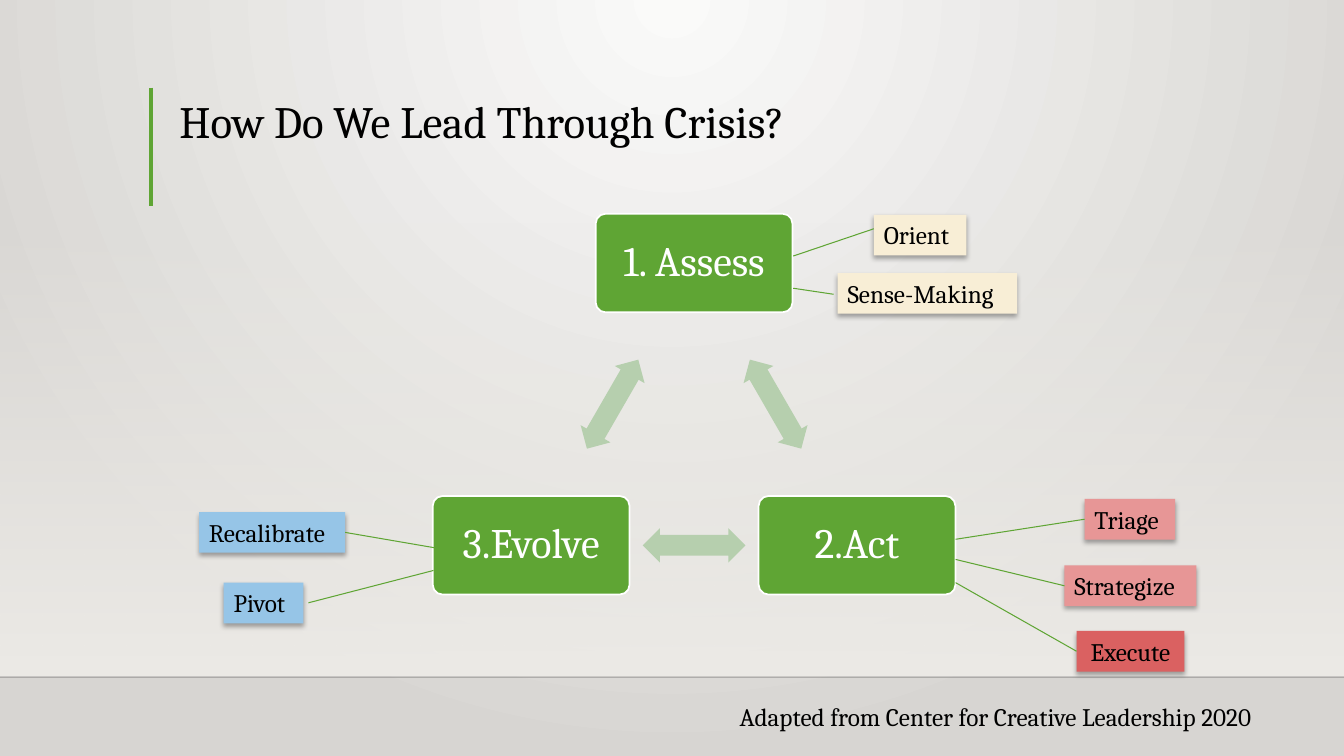
import math
from dataclasses import dataclass

from lxml import etree
from pptx import Presentation
from pptx.dml.color import RGBColor
from pptx.enum import shapes, text
from pptx.oxml import ns
from pptx.util import Pt

SHAPE = shapes.MSO_SHAPE
ALIGN = text.PP_ALIGN
ANCHOR = text.MSO_ANCHOR
WIDTH, HEIGHT = 960, 540
LEFT_SIDE, RIGHT_SIDE = 1, 3


@dataclass(frozen=True)
class Theme:
    font: str = "Cambria"
    title_size: int = 32
    step_size: int = 30
    label_size: int = 18
    ink: str = "000000"
    white: str = "FFFFFF"
    green: str = "5FA534"
    arrow: str = "B6CFAE"
    horizon: str = "000001"
    haze: str = "EDEBE7"
    glow: str = "FAFAF9"
    edge: str = "D7D5D2"
    cream: str = "F8EED6"
    pink: str = "E79696"
    red: str = "DA6161"
    blue: str = "96C5E7"


def add_element(parent, tag, **attributes):
    values = {name: str(value) for name, value in attributes.items()}
    return etree.SubElement(parent, ns.qn(tag), values)


def set_alpha(color_element, percent):
    add_element(color_element, "a:alpha", val=percent * 1000)


class CrisisSlide:
    def __init__(self, presentation, theme):
        self.theme = theme
        self.slide = presentation.slides.add_slide(presentation.slide_layouts[5])

    def color(self, fill, value):
        fill.solid()
        fill.fore_color.rgb = RGBColor.from_string(value)

    def gradient(self, fill, start, end):
        fill.gradient()
        for stop, value, position in zip(fill.gradient_stops, (start, end), (0, 1)):
            stop.color.rgb = RGBColor.from_string(value)
            stop.position = position

    def background(self):
        """Radial glow centred on the top edge."""
        self.gradient(self.slide.background.fill, self.theme.glow, self.theme.edge)
        gradient = self.slide.element.find(".//" + ns.qn("a:gradFill"))
        gradient.remove(gradient.find(ns.qn("a:lin")))
        radial = add_element(gradient, "a:path", path="circle")
        add_element(radial, "a:fillToRect", l=43000, t=0, r=43000, b=100000)

    def haze(self, top, height):
        """Full-width band that fades in downwards."""
        band = self.shape(SHAPE.RECTANGLE, 0, top, WIDTH, height, self.theme.haze)
        self.gradient(band.fill, self.theme.haze, self.theme.haze)
        band.fill.gradient_angle = 270
        set_alpha(band._element.find(".//" + ns.qn("a:srgbClr")), 0)

    def add_text(self, shape, words, size, color, align=ALIGN.LEFT, anchor=ANCHOR.TOP):
        frame = shape.text_frame
        frame.word_wrap = True
        frame.auto_size = text.MSO_AUTO_SIZE.NONE
        frame.vertical_anchor = anchor
        paragraph = frame.paragraphs[0]
        paragraph.alignment = align
        run = paragraph.add_run()
        run.text = words
        run.font.name = self.theme.font
        run.font.size = Pt(size)
        run.font.color.rgb = RGBColor.from_string(color)
        return paragraph

    def title(self, words, left, top, width, height):
        title = self.slide.shapes.title
        title.left, title.top = Pt(left), Pt(top)
        title.width, title.height = Pt(width), Pt(height)
        paragraph = self.add_text(title, words, self.theme.title_size, self.theme.ink,
                                  anchor=ANCHOR.BOTTOM)
        paragraph.line_spacing = 0.9

    def shape(self, kind, left, top, width, height, fill):
        shape = self.slide.shapes.add_shape(kind, Pt(left), Pt(top), Pt(width), Pt(height))
        shape.shadow.inherit = False
        self.color(shape.fill, fill)
        shape.line.fill.background()
        return shape

    def step(self, words, center, width, height):
        x, y = center
        box = self.shape(SHAPE.ROUNDED_RECTANGLE, x - width / 2, y - height / 2,
                         width, height, self.theme.green)
        box.adjustments[0] = 0.1
        self.color(box.line.fill, self.theme.white)
        box.line.width = Pt(1.25)
        paragraph = self.add_text(box, words, self.theme.step_size, self.theme.white,
                                  ALIGN.CENTER, ANCHOR.MIDDLE)
        paragraph.line_spacing = 0.9

    def arrow(self, start, end, length, thickness):
        """Double arrow halfway between two step centres."""
        x, y = (start[0] + end[0]) / 2, (start[1] + end[1]) / 2
        arrow = self.shape(SHAPE.LEFT_RIGHT_ARROW, x - length / 2, y - thickness / 2,
                           length, thickness, self.theme.arrow)
        arrow.adjustments[0], arrow.adjustments[1] = 0.6, 0.5
        angle = math.atan2(end[1] - start[1], end[0] - start[0])
        arrow.rotation = round(math.degrees(angle)) % 360

    def label(self, words, left, top, width, fill, align=ALIGN.LEFT):
        box = self.shape(SHAPE.RECTANGLE, left, top, width, 29, fill)
        self.add_text(box, words, self.theme.label_size, self.theme.ink, align)
        effects = box._element.spPr.find(ns.qn("a:effectLst"))
        shadow = add_element(effects, "a:outerShdw", blurRad=Pt(3.5), dist=Pt(2.2),
                             dir=5400000, algn="t", rotWithShape=0)
        set_alpha(add_element(shadow, "a:srgbClr", val=self.theme.ink), 32)
        return box

    def caption(self, words, left, top, width, height):
        box = self.slide.shapes.add_textbox(Pt(left), Pt(top), Pt(width), Pt(height))
        self.add_text(box, words, self.theme.label_size, self.theme.ink)

    def line(self, start, end, color, weight, alpha=None):
        line = self.slide.shapes.add_connector(
            shapes.MSO_CONNECTOR.STRAIGHT, *(Pt(value) for value in (*start, *end)))
        self.color(line.line.fill, color)
        line.line.width = Pt(weight)
        properties = line._element.spPr
        add_element(properties, "a:effectLst")
        if alpha is not None:
            set_alpha(properties.find(".//" + ns.qn("a:srgbClr")), alpha)
        return line


def main():
    presentation = Presentation()
    presentation.slide_width, presentation.slide_height = Pt(WIDTH), Pt(HEIGHT)
    theme = Theme()
    page = CrisisSlide(presentation, theme)
    page.background()
    page.haze(158.4, 324)
    page.line((0, 483.8), (WIDTH, 483.8), theme.horizon, 1, alpha=20)
    page.line((108, 62.6), (108, 146.9), theme.green, 3)
    page.title("How Do We Lead Through Crisis?", 121, 63.4, 749.5, 46)

    # The three steps sit on a circle, clockwise from the top.
    steps = ["1. Assess", "2.Act", "3.Evolve"]
    radius = 134.4
    centers = []
    for index in range(len(steps)):
        angle = math.radians(-90 + index * 360 / len(steps))
        centers.append((495.8 + radius * math.cos(angle), 322.3 + radius * math.sin(angle)))
    for index, (words, center) in enumerate(zip(steps, centers)):
        page.step(words, center, 140.6, 70.4)
        page.arrow(center, centers[(index + 1) % len(steps)], 73.4, 24.6)

    # Words, left, top, width, fill, line start at the step, line end at the label.
    # A line end given as a side number is joined to the middle of that side.
    labels = [
        ("Orient", 624.2, 153.4, 66.2, theme.cream, (566.6, 182.9), (624.2, 163.4)),
        ("Sense-Making", 598.3, 195.1, 128.2, theme.cream, (566.6, 205.9), (595.4, 210.2)),
        ("Triage", 774.7, 356.4, 64.8, theme.pink, (682.6, 385.2), LEFT_SIDE),
        ("Strategize", 760.3, 403.9, 94.3, theme.pink, (682.6, 399.6), LEFT_SIDE),
        ("Execute", 769, 450.7, 77, theme.red, (682.6, 416.2), LEFT_SIDE),
        ("Recalibrate", 142.2, 365.8, 104.4, theme.blue, (310, 391.2), RIGHT_SIDE),
        ("Pivot", 159.8, 416.2, 56.9, theme.blue, (309.6, 407.5), (220.3, 430.6)),
    ]
    for words, left, top, width, fill, start, end in labels:
        align = ALIGN.CENTER if words == "Execute" else ALIGN.LEFT
        box = page.label(words, left, top, width, fill, align)
        joined = end in (LEFT_SIDE, RIGHT_SIDE)
        line = page.line(start, start if joined else end, theme.green, 0.75)
        if joined:
            line.end_connect(box, end)

    page.caption("Adapted from Center for Creative Leadership 2020", 521.3, 497.5, 429.8, 29)
    presentation.save("out.pptx")


if __name__ == "__main__":
    main()
